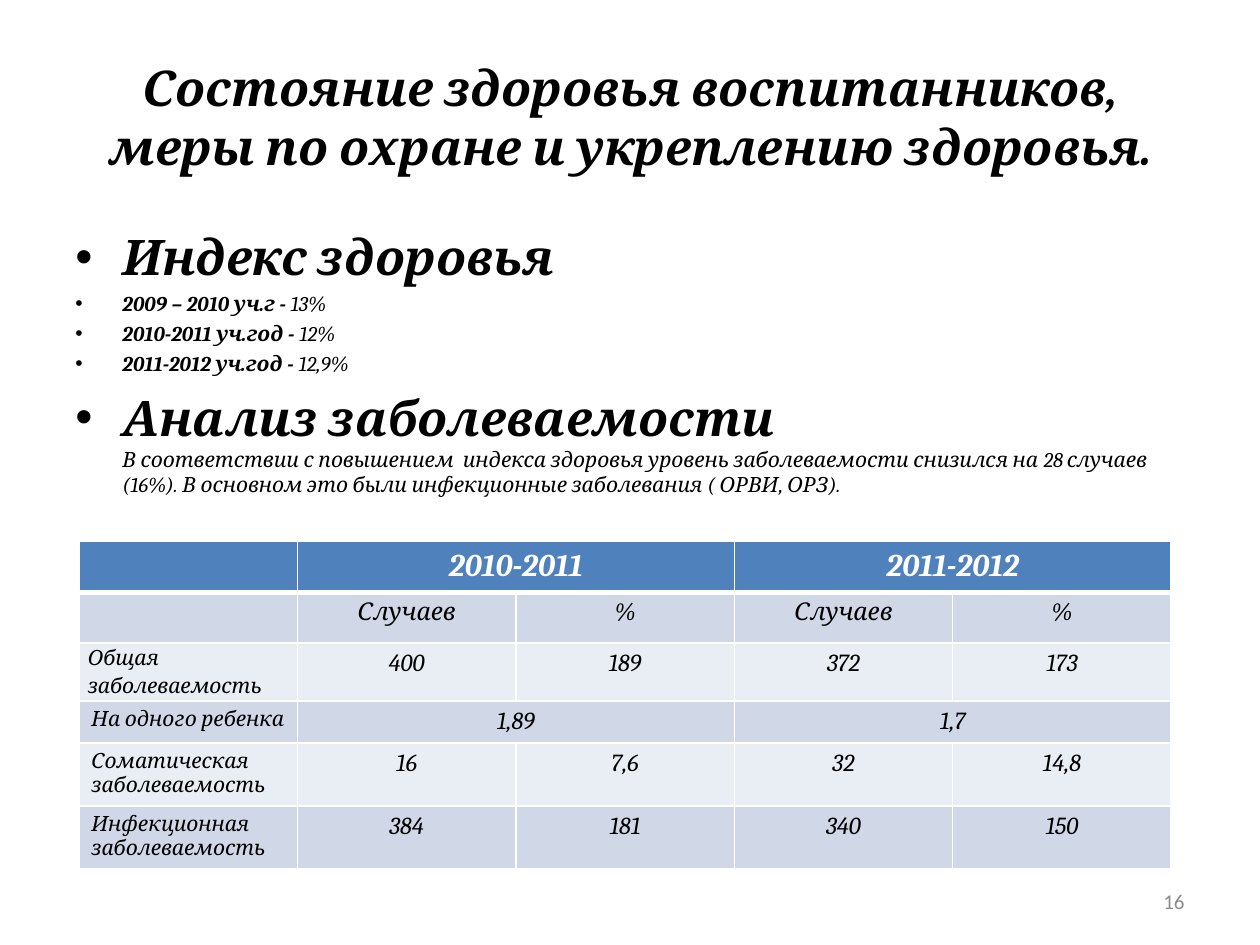
import lxml.etree
import pptx
import pptx.dml.color
import pptx.enum.text
import pptx.oxml.ns
import pptx.util
from pptx.util import Cm

COLORS = {
    "text": "000000",
    "white": "FFFFFF",
    "header": "4F81BD",
    "band_dark": "D0D8E8",
    "band_light": "E9EDF4",
    "number": "8C8C8C",
}
ALIGN = pptx.enum.text.PP_ALIGN
ANCHOR = pptx.enum.text.MSO_ANCHOR
HEADING_SIZE, SMALL_SIZE = 28, 12

TITLE = "Состояние здоровья воспитанников, меры по охране и укреплению здоровья."
INDEX_HEADING = "Индекс здоровья"
INDEX_VALUES = [
    ("2009 – 2010 уч.г - ", "13%"),
    ("2010-2011 уч.год - ", "12%"),
    ("2011-2012 уч.год - ", "12,9%"),
]
ANALYSIS_HEADING = "Анализ заболеваемости"
ANALYSIS_TEXT = (
    "В соответствии с повышением  индекса здоровья уровень заболеваемости "
    "снизился на 28 случаев (16%). В основном это были инфекционные "
    "заболевания ( ОРВИ, ОРЗ)."
)
ROWS = [
    ["", "2010-2011", "", "2011-2012", ""],
    ["", "Случаев", "%", "Случаев", "%"],
    ["Общая заболеваемость", "400", "189", "372", "173"],
    ["На одного ребенка", "1,89", "", "1,7", ""],
    ["Соматическая заболеваемость", "16", "7,6", "32", "14,8"],
    ["Инфекционная заболеваемость", "384", "181", "340", "150"],
]
ROW_HEIGHTS = [1.02, 1.02, 1.17, 0.84, 1.27, 1.27]
MERGED_ROWS = (0, 3)


def rgb(name):
    """Return the named palette colour."""
    return pptx.dml.color.RGBColor.from_string(COLORS[name])


def style(font, size, color="text", bold=False, italic=True, name="Cambria"):
    """Apply typeface, size, colour and emphasis to a font."""
    font.name, font.size = name, pptx.util.Pt(size)
    font.bold, font.italic = bold, italic
    font.color.rgb = rgb(color)


def add_box(page, left, top, width, height, anchor=ANCHOR.TOP):
    """Add a wrapping text box and return its text frame."""
    box = page.shapes.add_textbox(Cm(left), Cm(top), Cm(width), Cm(height))
    box.text_frame.word_wrap = True
    box.text_frame.vertical_anchor = anchor
    return box.text_frame


def add_line(page, text, align, left, top, width, height, **look):
    """Add a middle-anchored box holding one styled paragraph."""
    frame = add_box(page, left, top, width, height, ANCHOR.MIDDLE)
    frame.text = text
    para = frame.paragraphs[0]
    para.alignment = align
    style(para.runs[0].font, **look)


def add_span(para, text, size, bold):
    """Append a styled run to a paragraph."""
    span = para.add_run()
    span.text = text
    style(span.font, size, bold=bold)


def add_bullet(para):
    """Give a paragraph a hanging round bullet."""
    properties = para._p.get_or_add_pPr()
    properties.set("marL", str(Cm(0.95)))
    properties.set("indent", str(-Cm(0.95)))
    for tag, attribute, value in (("a:buFont", "typeface", "Arial"), ("a:buChar", "char", "•")):
        mark = lxml.etree.SubElement(properties, pptx.oxml.ns.qn(tag))
        mark.set(attribute, value)


def add_body(page, left, top, width, height):
    """Place the bulleted health index and the morbidity analysis."""
    frame = add_box(page, left, top, width, height)
    items = [(INDEX_HEADING, HEADING_SIZE, "")]
    items += [(label, SMALL_SIZE, value) for label, value in INDEX_VALUES]
    items.append((ANALYSIS_HEADING, HEADING_SIZE, ANALYSIS_TEXT))
    for position, (lead, size, rest) in enumerate(items):
        para = frame.add_paragraph() if position else frame.paragraphs[0]
        add_bullet(para)
        if position:
            para.space_before = pptx.util.Pt(round(size * 0.23, 1))
        add_span(para, lead, size, True)
        if rest == ANALYSIS_TEXT:
            para.add_line_break()
        if rest:
            add_span(para, rest, SMALL_SIZE, False)


def add_borders(cell, bottom):
    """Draw white borders around a cell with the given bottom width."""
    properties = cell._tc.get_or_add_tcPr()
    for side, width in (("L", 1), ("R", 1), ("T", 1), ("B", bottom)):
        line = lxml.etree.SubElement(properties, pptx.oxml.ns.qn(f"a:ln{side}"))
        line.set("w", str(pptx.util.Pt(width)))
        fill = lxml.etree.SubElement(line, pptx.oxml.ns.qn("a:solidFill"))
        color = lxml.etree.SubElement(fill, pptx.oxml.ns.qn("a:srgbClr"))
        color.set("val", COLORS["white"])


def fill_cell(cell, text, row, column):
    """Set the fill, borders and text of one table cell."""
    add_borders(cell, 1 if row else 3)
    cell.fill.solid()
    band = "band_dark" if row % 2 else "band_light"
    cell.fill.fore_color.rgb = rgb(band if row else "header")
    if not text:
        return
    cell.text = text
    para = cell.text_frame.paragraphs[0]
    font = para.runs[0].font
    if column:
        para.alignment = ALIGN.CENTER
    if row == 0:
        style(font, 18, "white", bold=True)
    else:
        style(font, 14 if column else SMALL_SIZE)


def add_morbidity_table(page, left, top, width, height):
    """Place the two-year morbidity table."""
    count = len(ROWS[0])
    table = page.shapes.add_table(
        len(ROWS), count, Cm(left), Cm(top), Cm(width), Cm(height)
    ).table
    for column in table.columns:
        column.width = Cm(width / count)
    for row, values in enumerate(ROWS):
        table.rows[row].height = Cm(ROW_HEIGHTS[row])
        for column, text in enumerate(values):
            fill_cell(table.cell(row, column), text, row, column)
    for row in MERGED_ROWS:
        for column in (1, 3):
            table.cell(row, column).merge(table.cell(row, column + 1))
    total = table.cell(2, 0)
    total.margin_left = total.margin_right = Cm(0.18)
    total.margin_top = total.margin_bottom = 0
    para = total.text_frame.paragraphs[0]
    para.alignment, para.line_spacing = ALIGN.JUSTIFY, 1.15


def main():
    """Build and save the slide."""
    deck = pptx.Presentation()
    deck.slide_width, deck.slide_height = Cm(25.4), Cm(19.05)
    page = deck.slides.add_slide(deck.slide_layouts[6])
    add_line(page, TITLE, ALIGN.CENTER, 1.27, 0.76, 22.86, 3.18,
             size=HEADING_SIZE, bold=True)
    add_body(page, 1.27, 4.45, 22.86, 13.82)
    add_line(page, "16", ALIGN.RIGHT, 18.2, 17.66, 5.93, 1.01,
             size=SMALL_SIZE, color="number", italic=False, name="Calibri")
    add_morbidity_table(page, 1.59, 10.92, 22.02, sum(ROW_HEIGHTS))
    deck.save("out.pptx")


if __name__ == "__main__":
    main()
